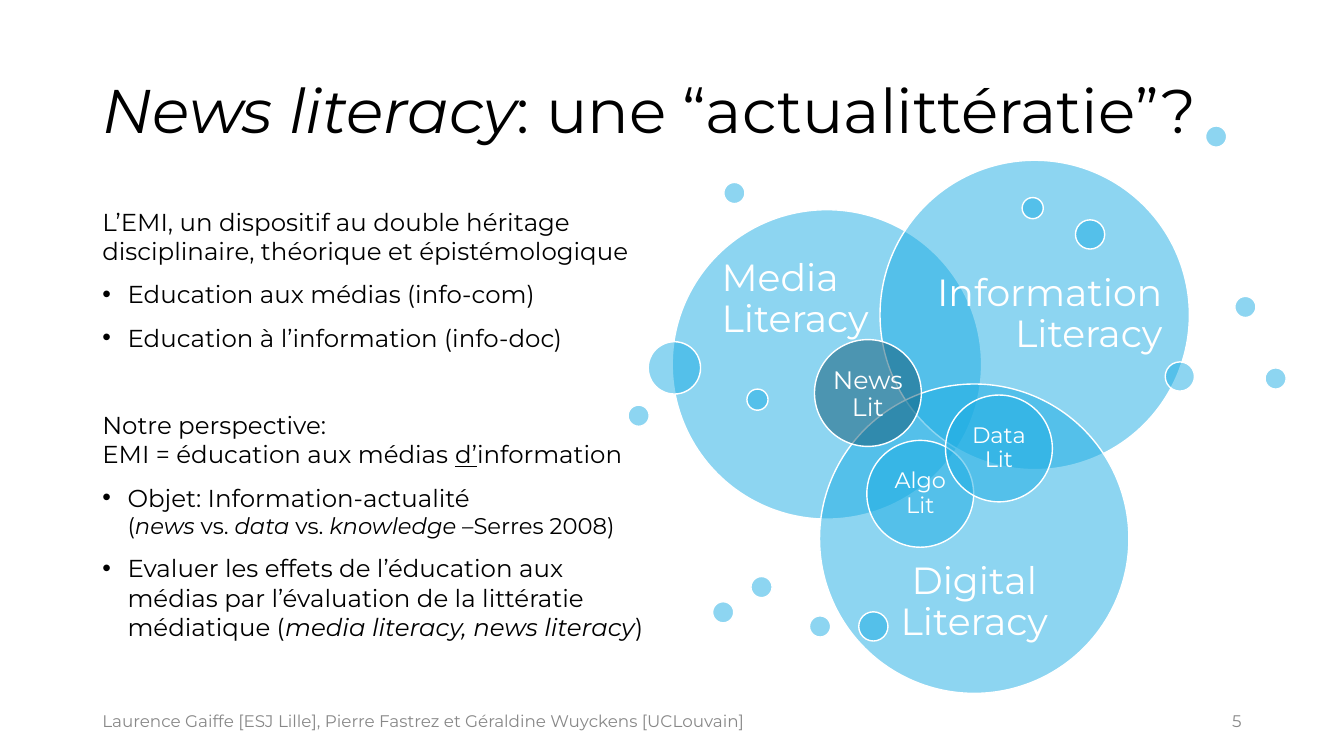
from pptx import Presentation
from pptx.dml.color import RGBColor
from pptx.enum.shapes import MSO_SHAPE
from pptx.enum.text import MSO_ANCHOR, MSO_AUTO_SIZE, PP_ALIGN
from pptx.oxml.ns import qn
from pptx.util import Pt
from lxml import etree

FONT = "Montserrat"
COLORS = {"sky": "1CADE4", "deep": "0D5672", "white": "FFFFFF",
          "black": "000000", "grey": "888888"}
LARGE, SMALL = 221, 76.3  # circle diameters
ITALIC, UNDERLINE = {"italic": True}, {"underline": True}

# Circles: left, top, colour
LARGE_CIRCLES = [(480.2, 149.8, "sky"), (628.6, 114.5, "sky"), (585.4, 274.3, "sky")]
SMALL_CIRCLES = [(619.2, 314.6, "sky"), (581.8, 242.6, "deep"), (675.4, 282.2, "sky")]

# Dots: diameter -> left, top
DOTS = {
    15.1: [(509, 429.8), (882, 211.7), (730.1, 141.1), (533.5, 277.9),
           (448.6, 289.4), (536.4, 411.8), (903.6, 262.8), (578.2, 439.9),
           (517, 130.3), (861.1, 90)],
    20.9: [(613.4, 437), (768.2, 157), (832.3, 258.5)],
    37.4: [(463, 244.1)],
}

# Body paragraphs: bulleted, space before, spans of (text, size, style)
BODY = [
    (False, 0, [("L’EMI, un dispositif au double héritage disciplinaire, "
                 "théorique et épistémologique", 17.5, {})]),
    (True, 10, [("Education aux médias (info-com)", 17.5, {})]),
    (True, 10, [("Education à l’information (info-doc)", 17.5, {})]),
    (False, 41.3, [("Notre perspective:\nEMI = éducation aux médias ", 17.5, {}),
                   ("d’", 17.5, UNDERLINE), ("information", 17.5, {})]),
    (True, 10, [("Objet: Information-actualité\n", 17.5, {}), ("(", 16.2, {}),
                ("news", 16.2, ITALIC), (" vs. ", 16.2, {}),
                ("data ", 16.2, ITALIC), ("vs. ", 16.2, {}),
                ("knowledge ", 16.2, ITALIC), ("–Serres 2008)", 16.2, {})]),
    (True, 10, [("Evaluer les effets de l’éducation aux médias par l’évaluation "
                 "de la littératie médiatique (", 17.5, {}),
                ("media literacy, news literacy", 17.5, ITALIC), (")", 17.5, {})]),
]


def rgb(name):
    return RGBColor.from_string(COLORS[name])


def add_span(para, text, size, color, italic=False, underline=False):
    for index, line in enumerate(text.split("\n")):
        if index:
            para.add_line_break()
        if line:
            span = para.add_run()
            span.text = line
            span.font.name = FONT
            span.font.size = Pt(size)
            span.font.color.rgb = rgb(color)
            span.font.italic = italic
            span.font.underline = underline


def add_bullet(para):
    properties = para._p.get_or_add_pPr()
    properties.set("marL", str(Pt(18)))
    properties.set("indent", str(Pt(-18)))
    etree.SubElement(properties, qn("a:buFont"), typeface="Arial")
    etree.SubElement(properties, qn("a:buChar"), char="•")


def set_frame(box, anchor, insets=(7.2, 3.6, 7.2, 3.6)):
    frame = box.text_frame
    frame.word_wrap = True
    frame.auto_size = MSO_AUTO_SIZE.NONE
    frame.vertical_anchor = anchor
    (frame.margin_left, frame.margin_top,
     frame.margin_right, frame.margin_bottom) = [Pt(inset) for inset in insets]
    return frame


def add_text_box(page, area, anchor, **frame_options):
    box = page.shapes.add_textbox(*[Pt(length) for length in area])
    return set_frame(box, anchor, **frame_options)


def add_label(page, area, text, size, color, align=PP_ALIGN.CENTER,
              anchor=MSO_ANCHOR.MIDDLE, spacing=0.9, insets=(19.4,) * 4):
    para = add_text_box(page, area, anchor, insets=insets).paragraphs[0]
    para.alignment = align
    para.line_spacing = spacing
    add_span(para, text, size, color)


def add_circle(page, left, top, diameter, color="sky"):
    circle = page.shapes.add_shape(
        MSO_SHAPE.OVAL, Pt(left), Pt(top), Pt(diameter), Pt(diameter))
    circle.shadow.inherit = False
    circle.fill.solid()
    circle.fill.fore_color.rgb = rgb(color)
    solid = circle._element.spPr.find(qn("a:solidFill"))
    etree.SubElement(solid[0], qn("a:alpha"), val="50000")
    circle.line.color.rgb = rgb("white")
    circle.line.width = Pt(1)


def add_title(page):
    title = page.shapes.title
    title.left, title.top, title.width, title.height = Pt(66), Pt(28.8), Pt(828), Pt(104.4)
    para = set_frame(title, MSO_ANCHOR.MIDDLE).paragraphs[0]
    para.alignment = PP_ALIGN.LEFT
    para.line_spacing = 0.9
    add_span(para, "News literacy", 44, "black", italic=True)
    add_span(para, ": une “actualittératie”?", 44, "black")


def add_body(page):
    frame = add_text_box(page, (66, 144, 408, 385), MSO_ANCHOR.TOP)
    for index, (bulleted, space, spans) in enumerate(BODY):
        para = frame.add_paragraph() if index else frame.paragraphs[0]
        if space:
            para.space_before = Pt(space)
        if bulleted:
            add_bullet(para)
        for text, size, style in spans:
            add_span(para, text, size, "black", **style)


def add_diagram(page):
    # Three overlapping literacies
    for left, top, color in LARGE_CIRCLES:
        add_circle(page, left, top, LARGE, color)
    media, information, digital = [(left, top, LARGE, LARGE)
                                   for left, top, _ in LARGE_CIRCLES]
    add_label(page, media, "Media Literacy", 27, "white", PP_ALIGN.LEFT,
              MSO_ANCHOR.TOP, insets=(35.3,) * 4)
    add_label(page, information, "Information Literacy", 27, "white", PP_ALIGN.RIGHT)
    add_label(page, digital, "Digital Literacy", 27, "white",
              anchor=MSO_ANCHOR.BOTTOM, insets=(19.4, 19.4, 19.4, 35.4))

    # Scattered dots
    for diameter, places in DOTS.items():
        for left, top in places:
            add_circle(page, left, top, diameter)

    # Specific literacies
    for left, top, color in SMALL_CIRCLES:
        add_circle(page, left, top, SMALL, color)
    add_label(page, (617.2, 314.6, 80.3, SMALL), "Algo Lit", 16, "white")
    add_label(page, (573.1, 244.1, 93.6, SMALL), "News Lit", 18, "white")
    add_label(page, (673.4, 282.2, 80.3, SMALL), "Data Lit", 16, "white")


def add_footer(page):
    margins = (7.2, 3.6, 7.2, 3.6)
    add_label(page, (66, 500.5, 600, 28.8),
              "Laurence Gaiffe [ESJ Lille], Pierre Fastrez et Géraldine Wuyckens [UCLouvain]",
              12, "grey", PP_ALIGN.LEFT, spacing=1.0, insets=margins)
    add_label(page, (678, 500.5, 216, 28.8), "5", 12, "grey",
              PP_ALIGN.RIGHT, spacing=1.0, insets=margins)


def main():
    deck = Presentation()
    deck.slide_width, deck.slide_height = Pt(960), Pt(540)
    page = deck.slides.add_slide(deck.slide_layouts[5])
    add_diagram(page)
    add_title(page)
    add_body(page)
    add_footer(page)
    deck.save("out.pptx")


if __name__ == "__main__":
    main()
